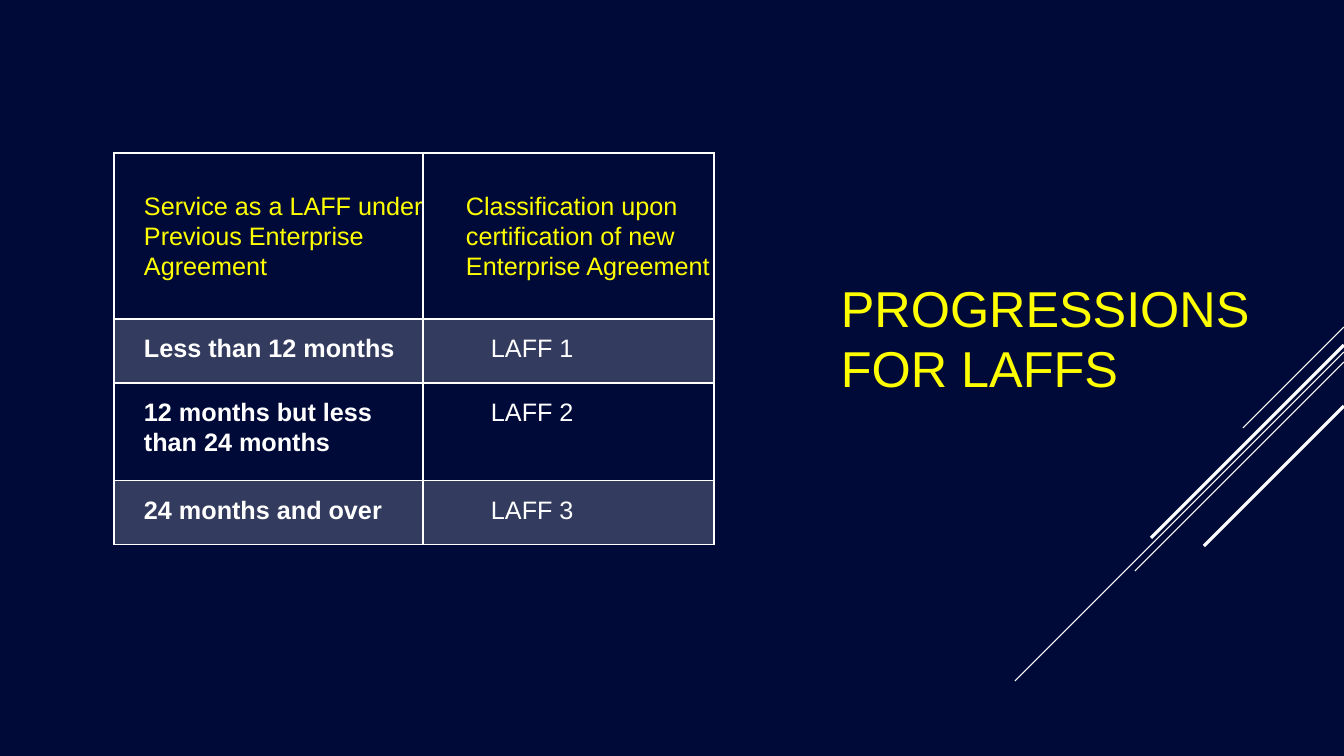
from lxml.etree import SubElement
from pptx import Presentation
from pptx.dml.color import RGBColor as RGB
from pptx.enum.shapes import MSO_CONNECTOR as CONN
from pptx.enum.text import MSO_ANCHOR as ANCHOR
from pptx.oxml.ns import qn
from pptx.util import Emu, Pt

FONT = "Arial"
COLORS = {"navy": "000A38", "yellow": "FFFF00", "white": "FFFFFF"}
TITLE = "PROGRESSIONS FOR LAFFS"
TITLE_BOX = (831, 70, 468, 333)
ROWS = [
    ("Service as a LAFF under Previous Enterprise Agreement",
     "Classification upon certification of new Enterprise Agreement"),
    ("Less than 12 months", "LAFF 1"),
    ("12 months but less than 24 months", "LAFF 2"),
    ("24 months and over", "LAFF 3"),
]
TABLE_AT = (114, 153)
COL_WIDTHS = (309, 291)
ROW_HEIGHTS = (166, 64, 98, 64)
HEADER_INDENTS = (12, 25)
BODY_INDENTS = (12, 50)
CELL_MARGINS = {"left": 18, "top": 14, "right": 0, "bottom": 14}
RIGHT_EDGE = 1344
STREAKS = [
    (327, 101, 0.75),
    (352, 329, 0.75),
    (362, 209, 0.75),
    (345, 193, 2.25),
    (406, 140, 2.25),
]


def px(n):
    return Emu(round(n * 914400 / 100.8))


def color(name):
    return RGB.from_string(COLORS[name])


def add_run(p, text, size, name, bold=False):
    r = p.add_run()
    r.text = text
    r.font.name = FONT
    r.font.size = Pt(size)
    r.font.bold = bold
    r.font.color.rgb = color(name)


def add_borders(cell):
    tcPr = cell._tc.get_or_add_tcPr()
    for side in ("lnL", "lnR", "lnT", "lnB"):
        ln = SubElement(tcPr, qn(f"a:{side}"), w=str(Pt(1)))
        fill = SubElement(ln, qn("a:solidFill"))
        SubElement(fill, qn("a:srgbClr"), val=COLORS["white"])


def fill_cell(cell, shaded):
    if not shaded:
        cell.fill.background()
        return
    cell.fill.solid()
    cell.fill.fore_color.rgb = color("white")
    clr = cell._tc.tcPr.find(qn("a:solidFill")).find(qn("a:srgbClr"))
    SubElement(clr, qn("a:alpha"), val="20000")


def add_streak(slide, top, run, width):
    line = slide.shapes.add_connector(
        CONN.STRAIGHT, px(RIGHT_EDGE), px(top), px(RIGHT_EDGE - run), px(top + run))
    line.line.color.rgb = color("white")
    line.line.width = Pt(width)
    SubElement(line._element.spPr, qn("a:effectLst"))


def add_title(slide):
    tf = slide.shapes.add_textbox(*map(px, TITLE_BOX)).text_frame
    tf.word_wrap = True
    tf.vertical_anchor = ANCHOR.BOTTOM
    add_run(tf.paragraphs[0], TITLE, 36, "yellow")


def add_progressions(slide):
    size = (sum(COL_WIDTHS), sum(ROW_HEIGHTS))
    table = slide.shapes.add_table(
        len(ROWS), len(COL_WIDTHS), *map(px, TABLE_AT + size)).table
    table.first_row = table.horz_banding = False
    for col, width in zip(table.columns, COL_WIDTHS):
        col.width = px(width)
    for i, texts in enumerate(ROWS):
        table.rows[i].height = px(ROW_HEIGHTS[i])
        header = i == 0
        indents = HEADER_INDENTS if header else BODY_INDENTS
        for j, text in enumerate(texts):
            cell = table.cell(i, j)
            for side, margin in CELL_MARGINS.items():
                setattr(cell, f"margin_{side}", px(margin))
            cell.vertical_anchor = ANCHOR.MIDDLE if header else ANCHOR.TOP
            add_borders(cell)
            fill_cell(cell, shaded=i % 2 == 1)
            p = cell.text_frame.paragraphs[0]
            p.line_spacing = 1.07
            p._p.get_or_add_pPr().set("marL", str(px(indents[j])))
            add_run(p, text, 18, "yellow" if header else "white",
                    bold=not header and j == 0)


def main():
    prs = Presentation()
    prs.slide_width, prs.slide_height = px(1344), px(756)
    slide = prs.slides.add_slide(prs.slide_layouts[6])
    slide.background.fill.solid()
    slide.background.fill.fore_color.rgb = color("navy")
    for streak in STREAKS:
        add_streak(slide, *streak)
    add_title(slide)
    add_progressions(slide)
    prs.save("out.pptx")


if __name__ == "__main__":
    main()
